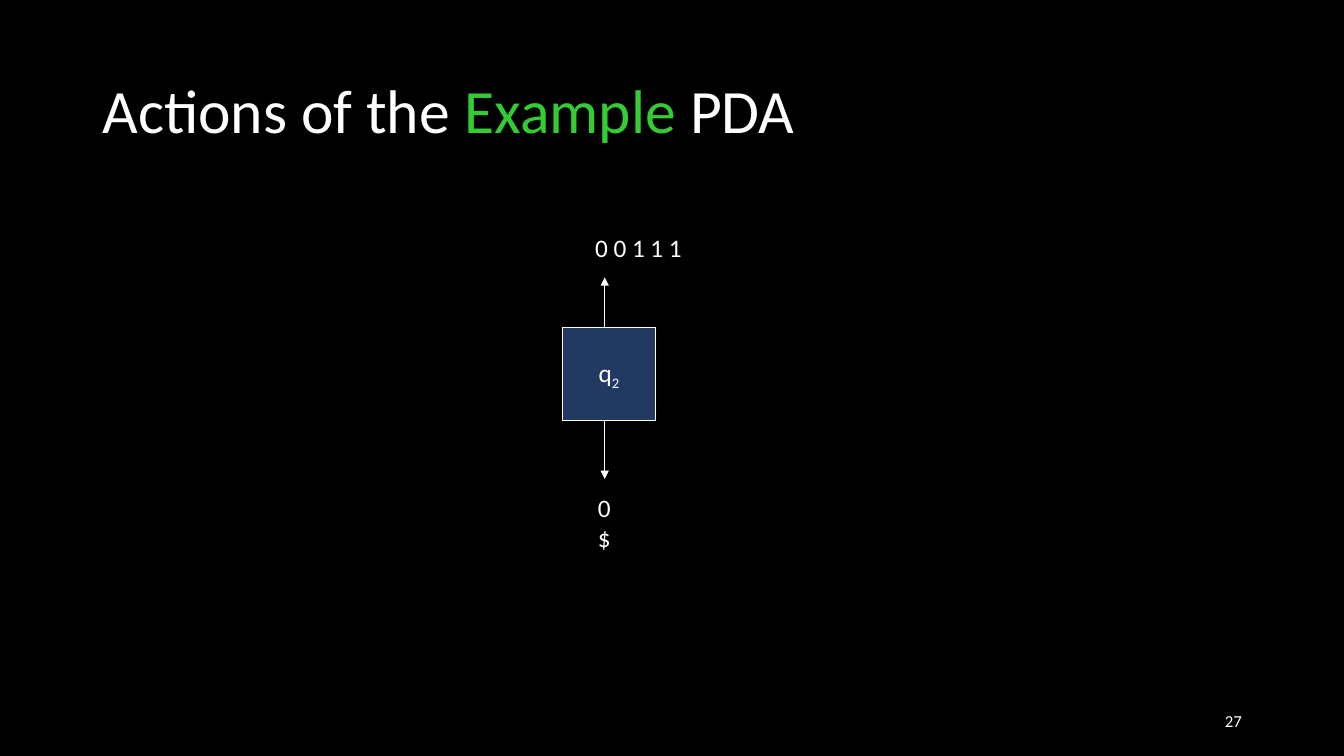
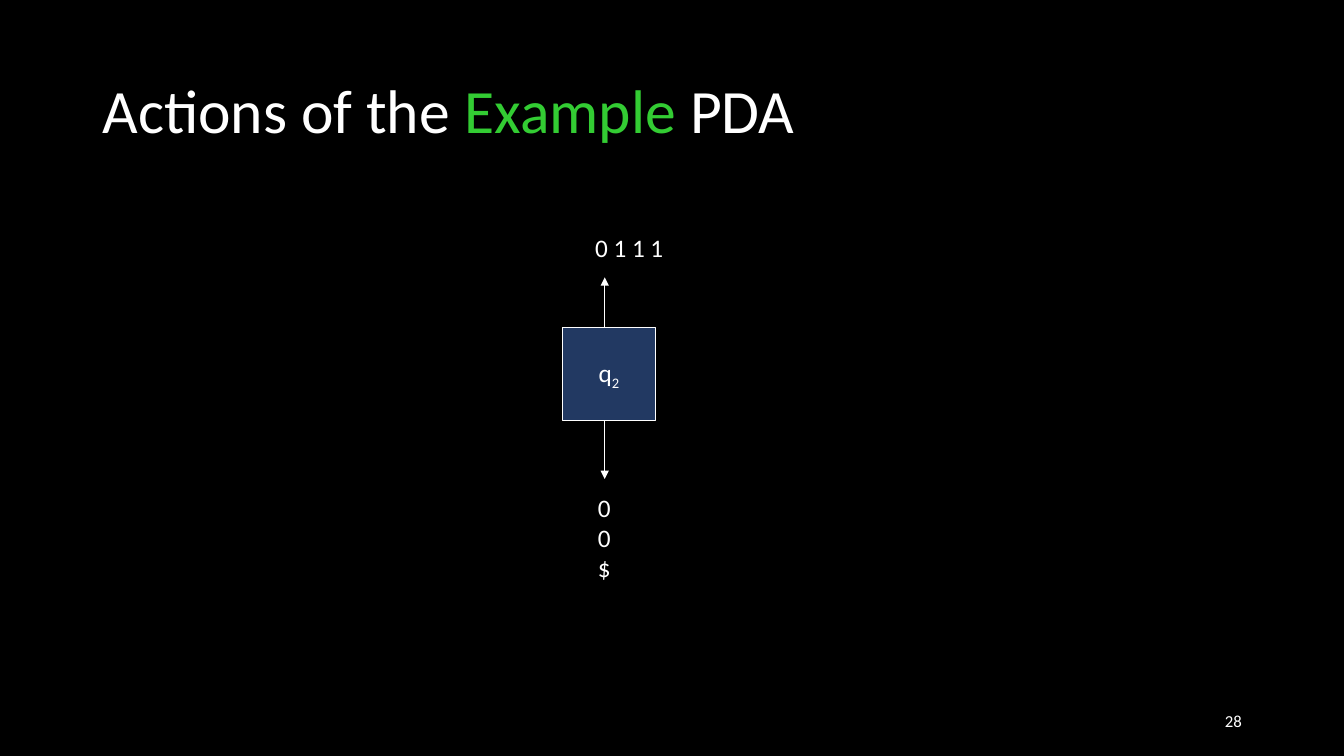
from lxml.etree import SubElement
from pptx import Presentation
from pptx.dml.color import RGBColor
from pptx.enum.shapes import MSO_CONNECTOR, MSO_SHAPE
from pptx.enum.text import MSO_ANCHOR, MSO_AUTO_SIZE, PP_ALIGN
from pptx.oxml.ns import qn
from pptx.util import Cm, Pt

FONT = "Calibri"
BLACK, WHITE, GREEN, BLUE = "000000", "FFFFFF", "33CC33", "4472C4"
HEAD_X = 15.24
STATE_LEFT, STATE_TOP, STATE_SIDE = 14.18, 8.26, 2.33
CONFIGURATIONS = [
    (27, "0 0 1 1 1", ["0", "$"]),
    (28, "0 1 1 1", ["0", "0", "$"]),
]


def rgb(code):
    """Turn a hex string into a colour."""
    return RGBColor.from_string(code)


def add_run(paragraph, text, size=18, color=WHITE):
    """Append a formatted run and return it."""
    run = paragraph.add_run()
    run.text = text
    run.font.name = FONT
    run.font.size = Pt(size)
    run.font.color.rgb = rgb(color)
    return run


def add_label(slide, lines, left, top, width, height, size=18,
              align=PP_ALIGN.LEFT, anchor=MSO_ANCHOR.TOP):
    """Add a text box with one paragraph per line."""
    frame = slide.shapes.add_textbox(
        Cm(left), Cm(top), Cm(width), Cm(height)).text_frame
    frame.word_wrap = True
    frame.vertical_anchor = anchor
    for index, line in enumerate(lines):
        paragraph = frame.add_paragraph() if index else frame.paragraphs[0]
        paragraph.alignment = align
        add_run(paragraph, line, size)


def add_title(slide):
    """Place and fill the title placeholder."""
    title = slide.shapes.title
    title.left, title.top = Cm(2.33), Cm(1.01)
    title.width, title.height = Cm(29.21), Cm(3.68)
    frame = title.text_frame
    frame.auto_size = MSO_AUTO_SIZE.NONE
    frame.vertical_anchor = MSO_ANCHOR.MIDDLE
    heading = frame.paragraphs[0]
    heading.alignment = PP_ALIGN.LEFT
    heading.line_spacing = 0.9
    for text, color in [("Actions of the ", WHITE), ("Example ", GREEN), ("PDA", WHITE)]:
        add_run(heading, text, 44, color)


def add_state(slide, name, subscript):
    """Add the half-transparent control box with its state name."""
    state = slide.shapes.add_shape(
        MSO_SHAPE.RECTANGLE, Cm(STATE_LEFT), Cm(STATE_TOP), Cm(STATE_SIDE), Cm(STATE_SIDE))
    state.shadow.inherit = False
    state.fill.solid()
    state.fill.fore_color.rgb = rgb(BLUE)
    tint = state._element.spPr.find(qn("a:solidFill")).find(qn("a:srgbClr"))
    SubElement(tint, qn("a:alpha"), val="50000")
    state.line.color.rgb = rgb(WHITE)
    state.line.width = Pt(0.75)
    frame = state.text_frame
    frame.word_wrap = False
    frame.vertical_anchor = MSO_ANCHOR.MIDDLE
    caption = frame.paragraphs[0]
    caption.alignment = PP_ALIGN.CENTER
    add_run(caption, name)
    index = add_run(caption, subscript)
    index._r.get_or_add_rPr().set("baseline", "-25000")


def add_arrow(slide, start_y, end_y):
    """Add a vertical arrow on the head axis."""
    arrow = slide.shapes.add_connector(
        MSO_CONNECTOR.STRAIGHT, Cm(HEAD_X), Cm(start_y), Cm(HEAD_X), Cm(end_y))
    arrow.line.color.rgb = rgb(WHITE)
    arrow.line.width = Pt(0.75)
    properties = arrow._element.spPr
    SubElement(properties.find(qn("a:ln")), qn("a:tailEnd"), type="triangle")
    SubElement(properties, qn("a:effectLst"))


def add_configuration(prs, number, remaining_input, stack):
    """Add a slide showing one configuration of the automaton."""
    slide = prs.slides.add_slide(prs.slide_layouts[5])
    add_label(slide, [str(number)], 23.93, 17.65, 7.62, 1.02, 12,
              PP_ALIGN.RIGHT, MSO_ANCHOR.MIDDLE)
    add_title(slide)
    add_state(slide, "q", "2")
    add_label(slide, [remaining_input], 14.75, 5.72, 4, 1.02)
    add_arrow(slide, STATE_TOP, 6.99)
    add_label(slide, stack, 14.82, 12.28, 0.84, 0.25 + 0.77 * len(stack))
    add_arrow(slide, STATE_TOP + STATE_SIDE, 12.07)


def main():
    """Build and save the presentation."""
    prs = Presentation()
    prs.slide_width, prs.slide_height = Cm(33.87), Cm(19.05)
    backdrop = prs.slide_master.background.fill
    backdrop.solid()
    backdrop.fore_color.rgb = rgb(BLACK)
    for configuration in CONFIGURATIONS:
        add_configuration(prs, *configuration)
    prs.save("out.pptx")


if __name__ == "__main__":
    main()
